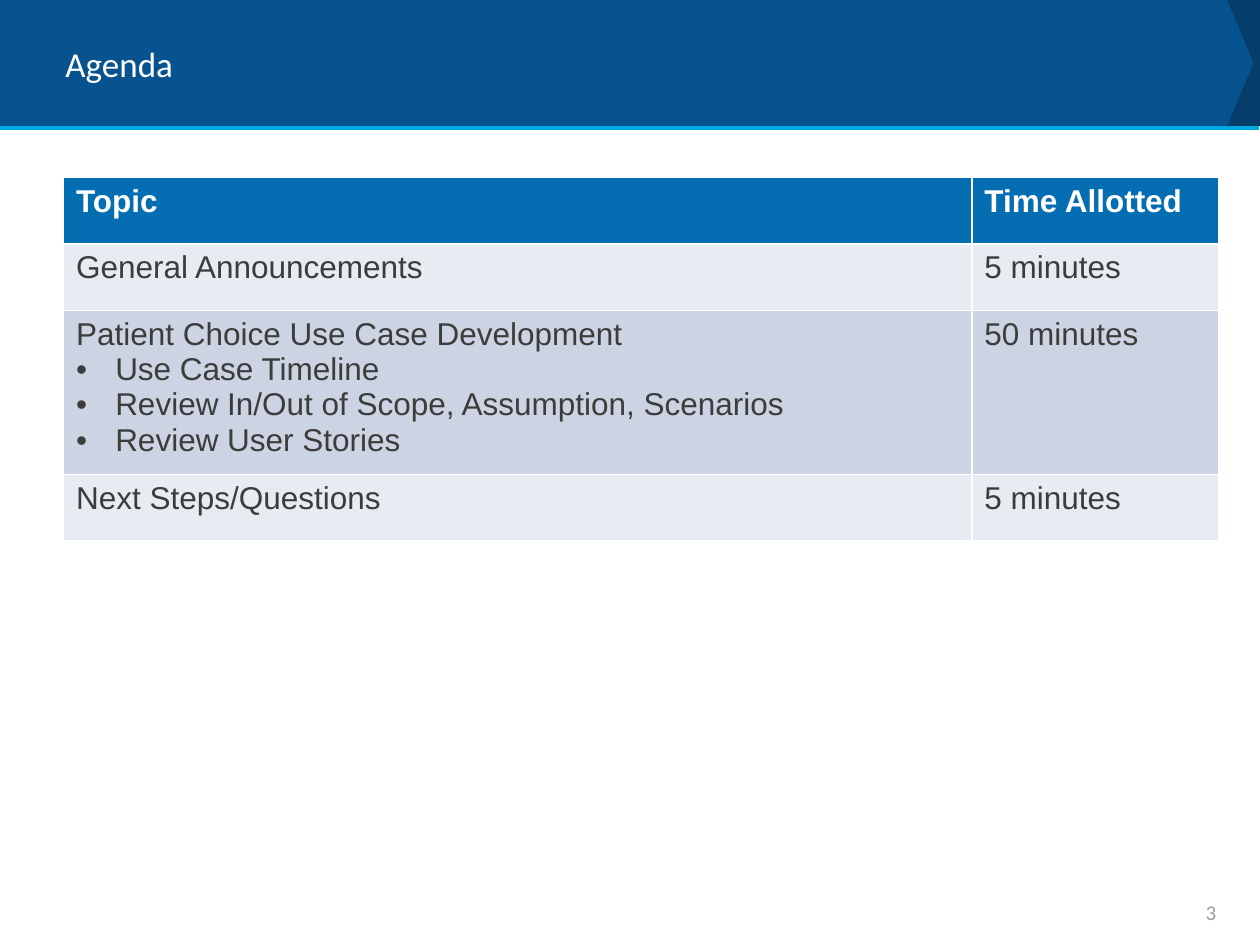
"""Build the agenda slide with its banner, time table and page number."""
from dataclasses import dataclass

import lxml.etree
import pptx
import pptx.dml.color
import pptx.enum.shapes
import pptx.enum.text
import pptx.oxml.ns
import pptx.util

Cm = pptx.util.Cm
Pt = pptx.util.Pt
qn = pptx.oxml.ns.qn
ALIGN = pptx.enum.text.PP_ALIGN
WHITE, INK = "FFFFFF", "3C3C3B"
PALE, DEEP = "E7EBF2", "CCD4E4"
HANG = Cm(0.79)


@dataclass
class Plate:
    left: float
    width: float
    point: float
    fill: str


@dataclass
class Label:
    text: str
    left: float
    top: float
    width: float
    height: float
    size: float
    tint: str
    align: ALIGN = ALIGN.LEFT


@dataclass
class Row:
    topic: str
    time: str
    fill: str
    height: float = 1.34
    points: tuple[str, ...] = ()
    tint: str = INK
    bold: bool = False


PLATES = [Plate(24.26, 1.14, 0, "053E6B"), Plate(0, 25.27, 0.21, "07538F")]
LABELS = [
    Label("Agenda", 1.07, 0.2, 23.29, 2.16, 20, WHITE),
    Label("3", 18.85, 18.06, 5.92, 0.64, 12, "9E9E9C", ALIGN.RIGHT),
]
ROWS = [
    Row("Topic", "Time Allotted", "056DB1", tint=WHITE, bold=True),
    Row("General Announcements", "5 minutes", PALE),
    Row("Patient Choice Use Case Development", "50 minutes", DEEP, 3.08,
        ("Use Case Timeline", "Review In/Out of Scope, Assumption, Scenarios",
         "Review User Stories")),
    Row("Next Steps/Questions", "5 minutes", PALE),
]


def shade(code: str) -> pptx.dml.color.RGBColor:
    return pptx.dml.color.RGBColor.from_string(code)


def paint(fill, code: str) -> None:
    fill.solid()
    fill.fore_color.rgb = shade(code)


def write(para, text: str, *, size: float = 18, face: str = "Arial",
          tint: str = INK, bold: bool = False, align: ALIGN = ALIGN.LEFT,
          dot: bool = False) -> None:
    if dot:
        props = para._p.get_or_add_pPr()
        props.set("marL", str(HANG))
        props.set("indent", str(-HANG))
        lxml.etree.SubElement(props, qn("a:buFont"), typeface="Arial")
        lxml.etree.SubElement(props, qn("a:buChar"), char="•")
    para.alignment = align
    run = para.add_run()
    run.text = text
    run.font.size = Pt(size)
    run.font.name = face
    run.font.bold = bold
    run.font.color.rgb = shade(tint)


def add_plate(slide, plate: Plate) -> None:
    shape = slide.shapes.add_shape(
        pptx.enum.shapes.MSO_SHAPE.PENTAGON,
        Cm(plate.left), Cm(0), Cm(plate.width), Cm(2.54))
    shape.adjustments[0] = plate.point
    shape.shadow.inherit = False
    paint(shape.fill, plate.fill)
    shape.line.fill.background()


def add_rule(slide) -> None:
    rule = slide.shapes.add_connector(
        pptx.enum.shapes.MSO_CONNECTOR.STRAIGHT,
        Cm(0), Cm(2.58), Cm(25.37), Cm(2.58))
    rule.line.color.rgb = shade("00A8E1")
    rule.line.width = Pt(2.25)
    lxml.etree.SubElement(rule._element.spPr, qn("a:effectLst"))


def add_label(slide, label: Label) -> None:
    box = slide.shapes.add_textbox(
        Cm(label.left), Cm(label.top), Cm(label.width), Cm(label.height))
    frame = box.text_frame
    frame.word_wrap = True
    frame.vertical_anchor = pptx.enum.text.MSO_ANCHOR.MIDDLE
    write(frame.paragraphs[0], label.text, size=label.size, face="Calibri",
          tint=label.tint, align=label.align)


def edge(cell) -> None:
    props = cell._tc.get_or_add_tcPr()
    for side in ("lnL", "lnR", "lnT", "lnB"):
        line = lxml.etree.SubElement(props, qn(f"a:{side}"), w=str(Pt(1)))
        fill = lxml.etree.SubElement(line, qn("a:solidFill"))
        lxml.etree.SubElement(fill, qn("a:srgbClr"), val=WHITE)


def add_grid(slide, rows: list[Row]) -> None:
    widths = (18.31, 4.98)
    tall = sum(row.height for row in rows)
    grid = slide.shapes.add_table(
        len(rows), len(widths), Cm(1.28), Cm(3.58),
        Cm(sum(widths)), Cm(tall)).table
    grid.horz_banding = False
    for column, width in zip(grid.columns, widths):
        column.width = Cm(width)
    for line, row in zip(grid.rows, rows):
        line.height = Cm(row.height)
        for cell, text in zip(line.cells, (row.topic, row.time)):
            edge(cell)
            paint(cell.fill, row.fill)
            write(cell.text_frame.paragraphs[0], text,
                  tint=row.tint, bold=row.bold)
        for point in row.points:
            write(line.cells[0].text_frame.add_paragraph(), point, dot=True)


def main() -> None:
    deck = pptx.Presentation()
    deck.slide_width, deck.slide_height = Cm(25.4), Cm(19.05)
    slide = deck.slides.add_slide(deck.slide_layouts[6])
    for plate in PLATES:
        add_plate(slide, plate)
    add_rule(slide)
    for label in LABELS:
        add_label(slide, label)
    add_grid(slide, ROWS)
    deck.save("out.pptx")


if __name__ == "__main__":
    main()
